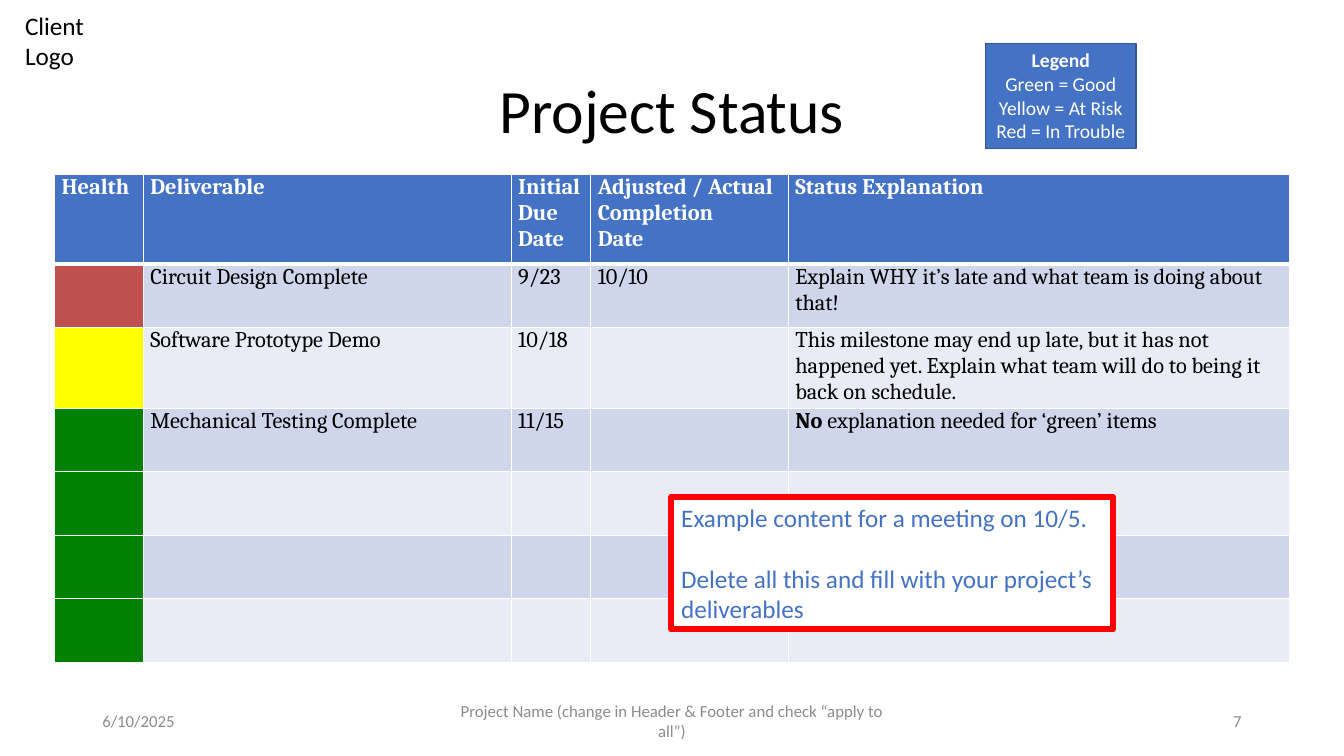
"""Build a project status slide with a health table, a legend and a note."""
from dataclasses import dataclass
from typing import Any

import lxml.etree
import pptx
import pptx.dml.color
import pptx.enum.shapes
import pptx.enum.text
import pptx.oxml.ns
import pptx.util

Pt = pptx.util.Pt
Align = pptx.enum.text.PP_ALIGN
Anchor = pptx.enum.text.MSO_ANCHOR
AutoSize = pptx.enum.text.MSO_AUTO_SIZE

WHITE, BLACK, BLUE, GRAY = "FFFFFF", "000000", "4472C4", "8C8C8C"
RED, YELLOW, GREEN = "C0504D", "FFFF00", "008000"
BANDS = ("CFD5EA", "E9EBF5")

COLUMN_WIDTHS = (63.36, 262.8, 56.88, 141.12, 357.84)
HEADER_HEIGHT, ROW_HEIGHT = 64, 45.36
HEADINGS = (
    "Health",
    "Deliverable",
    "Initial\nDue\nDate",
    "Adjusted / Actual\nCompletion\nDate",
    "Status Explanation",
)


@dataclass
class Milestone:
    health: str
    deliverable: str = ""
    due: str = ""
    completed: str = ""
    lead: str = ""
    explanation: str = ""


@dataclass
class Label:
    text: str
    left: float
    top: float
    width: float
    height: float
    size: float
    color: str = BLACK
    align: Any = Align.LEFT
    anchor: Any = Anchor.MIDDLE
    fill: str = ""
    line: str = ""
    line_width: float = 1
    wrap: bool = True
    grow: bool = False
    bold_first: bool = False
    line_spacing: float = 1
    gap: float = 0


MILESTONES = (
    Milestone(RED, "Circuit Design Complete", "9/23", "10/10",
              explanation="Explain WHY it’s late and what team is doing about that!"),
    Milestone(YELLOW, "Software Prototype Demo", "10/18",
              explanation="This milestone may end up late, but it has not happened yet. "
                          "Explain what team will do to being it back on schedule."),
    Milestone(GREEN, "Mechanical Testing Complete", "11/15",
              lead="No", explanation=" explanation needed for ‘green’ items"),
    Milestone(GREEN),
    Milestone(GREEN),
    Milestone(GREEN),
)

CLIENT = Label("Client\vLogo", 10.8, 3.6, 80, 51, 18, anchor=Anchor.TOP, grow=True)
OVERLAYS = (
    Label("Project Status", 66, 28.8, 828, 104.4, 44, align=Align.CENTER, line_spacing=0.9),
    Label("6/10/2025", 66, 500.5, 216, 28.75, 12, GRAY),
    Label("Project Name (change in Header & Footer and check “apply to all”)",
          318, 500.5, 324, 28.75, 12, GRAY, Align.CENTER),
    Label("7", 678, 500.5, 216, 28.75, 12, GRAY, Align.RIGHT),
    Label("Legend\nGreen = Good\nYellow = At Risk\nRed = In Trouble",
          704, 31, 107.5, 75, 14, WHITE, Align.CENTER, Anchor.TOP,
          fill=BLUE, line="325491", wrap=False, grow=True, bold_first=True),
    Label("Example content for a meeting on 10/5.\n"
          "Delete all this and fill with your project’s deliverables",
          479.5, 355, 315.4, 94.5, 18, BLUE, anchor=Anchor.TOP,
          fill=WHITE, line="FF0000", line_width=4.5, grow=True, gap=22),
)


def rgb(color: str) -> pptx.dml.color.RGBColor:
    """Turn a hex string into a colour."""
    return pptx.dml.color.RGBColor.from_string(color)


def style_font(font: Any, name: str, size: float, color: str, bold: bool = False) -> None:
    """Set the look of a font."""
    font.name, font.size, font.bold = name, Pt(size), bold
    font.color.rgb = rgb(color)


def add_label(page: Any, label: Label) -> None:
    """Draw a text box, or a filled rectangle when the label has a fill."""
    place = [Pt(n) for n in (label.left, label.top, label.width, label.height)]
    if label.fill:
        box = page.shapes.add_shape(pptx.enum.shapes.MSO_SHAPE.RECTANGLE, *place)
        box.shadow.inherit = False
        box.fill.solid()
        box.fill.fore_color.rgb = rgb(label.fill)
        box.line.color.rgb = rgb(label.line)
        box.line.width = Pt(label.line_width)
    else:
        box = page.shapes.add_textbox(*place)
    frame = box.text_frame
    frame.word_wrap = label.wrap
    frame.auto_size = AutoSize.SHAPE_TO_FIT_TEXT if label.grow else AutoSize.NONE
    frame.vertical_anchor = label.anchor
    frame.text = label.text
    for index, para in enumerate(frame.paragraphs):
        para.alignment = label.align
        para.line_spacing = label.line_spacing
        if index and label.gap:
            para.space_before = Pt(label.gap)
        style_font(para.font, "Calibri", label.size, label.color,
                   label.bold_first and index == 0)


def style_cell(cell: Any, fill: str, top: float = 1, bottom: float = 1) -> None:
    """Give a cell white borders, narrow margins and a fill."""
    properties = cell._tc.get_or_add_tcPr()
    for side, width in (("L", 1), ("R", 1), ("T", top), ("B", bottom)):
        border = lxml.etree.SubElement(
            properties, pptx.oxml.ns.qn(f"a:ln{side}"), w=str(Pt(width)))
        paint = lxml.etree.SubElement(border, pptx.oxml.ns.qn("a:solidFill"))
        lxml.etree.SubElement(paint, pptx.oxml.ns.qn("a:srgbClr"), val=WHITE)
    cell.margin_left = cell.margin_right = Pt(5)
    cell.margin_top = cell.margin_bottom = Pt(0)
    cell.fill.solid()
    cell.fill.fore_color.rgb = rgb(fill)


def write_cell(cell: Any, text: str, color: str, bold: bool = False, lead: str = "") -> None:
    """Write text into a cell, after an optional bold lead."""
    cell.text_frame.text = lead or text
    for para in cell.text_frame.paragraphs:
        style_font(para.font, "Cambria", 16, color, bold)
    if lead:
        para = cell.text_frame.paragraphs[0]
        para.runs[0].font.bold = True
        span = para.add_run()
        span.text = text
        span.font.bold = False


def add_status_table(page: Any) -> None:
    """Draw the table of milestones."""
    height = HEADER_HEIGHT + ROW_HEIGHT * len(MILESTONES)
    table = page.shapes.add_table(
        len(MILESTONES) + 1, len(HEADINGS),
        Pt(39), Pt(124.7), Pt(sum(COLUMN_WIDTHS)), Pt(height)).table
    table.horz_banding = False
    for column, width in zip(table.columns, COLUMN_WIDTHS):
        column.width = Pt(width)
    for index, row in enumerate(table.rows):
        row.height = Pt(ROW_HEIGHT if index else HEADER_HEIGHT)
    for column, heading in enumerate(HEADINGS):
        style_cell(table.cell(0, column), BLUE, bottom=3)
        write_cell(table.cell(0, column), heading, WHITE, bold=True)
    for index, item in enumerate(MILESTONES):
        texts = ("", item.deliverable, item.due, item.completed, item.explanation)
        for column, text in enumerate(texts):
            cell = table.cell(index + 1, column)
            fill = BANDS[index % 2] if column else item.health
            style_cell(cell, fill, top=1 if index else 3)
            write_cell(cell, text, BLACK, lead=item.lead if column == 4 else "")


def main() -> None:
    """Build and save the deck."""
    deck = pptx.Presentation()
    deck.slide_width, deck.slide_height = Pt(960), Pt(540)
    page = deck.slides.add_slide(deck.slide_layouts[6])
    add_label(page, CLIENT)
    add_status_table(page)
    for label in OVERLAYS:
        add_label(page, label)
    deck.save("out.pptx")


if __name__ == "__main__":
    main()
